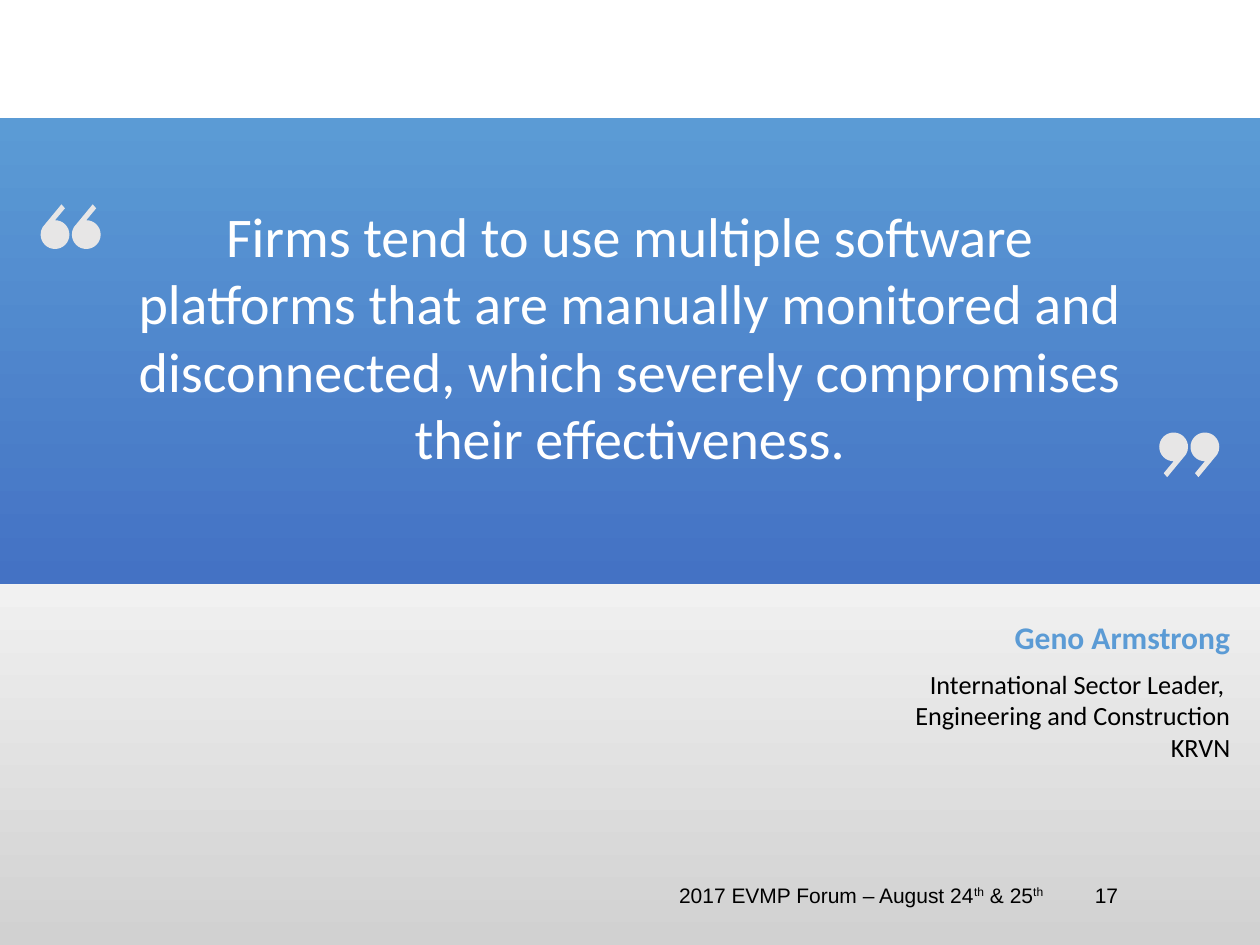
from copy import deepcopy
from dataclasses import dataclass

from lxml.etree import SubElement
from pptx import Presentation
from pptx.dml.color import RGBColor
from pptx.dml.fill import FillFormat as Fill
from pptx.enum.shapes import MSO_SHAPE as Shape
from pptx.enum.text import MSO_ANCHOR as Anchor, MSO_AUTO_SIZE as Auto, PP_ALIGN as Align
from pptx.oxml.ns import qn
from pptx.shapes.shapetree import GroupShapes as Group
from pptx.slide import Slide
from pptx.util import Cm, Pt

HUES = {
    "white": "FFFFFF", "pale": "FBFBFB", "grey": "D1D1D1",
    "navy": "4472C4", "sky": "5B9BD5", "mark": "E7E6E6", "black": "000000",
}
RAISED = "th"
RAD, PULL = 0.29, 0.16
TAIL = [(0.13, -0.61), (0.2, -0.53), (0, -RAD)]
BOWL = [
    (PULL, -RAD), (RAD, -PULL), (RAD, 0),
    (RAD, PULL), (PULL, RAD), (0, RAD),
    (-PULL, RAD), (-RAD, PULL), (-RAD, 0),
    (-RAD, -0.05), (-0.28, -0.1), (-0.25, -0.15),
]


@dataclass
class Label:
    box: tuple[float, float, float, float]
    runs: list[str]
    size: int
    hue: str
    face: str = "Calibri"
    align: Align = Align.LEFT
    anchor: Anchor = Anchor.TOP
    bold: bool = False
    auto: Auto = Auto.NONE


@dataclass
class Quote:
    x: float
    y: float
    side: int
    gap: float = 0.63


LABELS = [
    Label((2.2, 2.34, 21, 8.87),
          ["Firms tend to use multiple software platforms that are manually monitored "
           "and disconnected, which severely compromises their effectiveness."],
          32, "white", align=Align.CENTER, anchor=Anchor.MIDDLE),
    Label((9.61, 12.33, 15.44, 1.02), ["Geno Armstrong"], 18, "sky",
          align=Align.RIGHT, anchor=Anchor.MIDDLE, bold=True, auto=Auto.SHAPE_TO_FIT_TEXT),
    Label((9.61, 13.34, 15.44, 2.18),
          ["International Sector Leader, \nEngineering and Construction\nKRVN"],
          15, "black", align=Align.RIGHT, auto=Auto.SHAPE_TO_FIT_TEXT),
    Label((13.44, 17.66, 8.36, 1.02),
          ["2017 EVMP Forum – August 24", RAISED, " & 25", RAISED], 12, "black", "Arial"),
    Label((21.82, 17.66, 1.83, 1.02), ["17"], 12, "black", "Arial"),
]
QUOTES = [Quote(1.11, 4.73, 1), Quote(24.29, 9.01, -1)]


def tint(name: str) -> RGBColor:
    return RGBColor.from_string(HUES[name])


def blend(fill: Fill, names: list[str], angle: int) -> None:
    fill.gradient()
    fill.gradient_angle = angle
    first = fill.gradient_stops[0]._gs
    for _ in names[2:]:
        first.addnext(deepcopy(first))
    for i, (stop, name) in enumerate(zip(fill.gradient_stops, names)):
        stop.position = i / (len(names) - 1)
        stop.color.rgb = tint(name)


def write(slide: Slide, label: Label) -> None:
    frame = slide.shapes.add_textbox(*map(Cm, label.box)).text_frame
    frame.word_wrap = True
    frame.auto_size = label.auto
    frame.vertical_anchor = label.anchor
    para = frame.paragraphs[0]
    para.alignment = label.align
    if len(label.runs) == 1:
        para.text = label.runs[0]
    else:
        for text in label.runs:
            run = para.add_run()
            run.text = text
            if text == RAISED:
                run._r.get_or_add_rPr().set("baseline", "30000")
    font = para.font
    font.name, font.size, font.bold = label.face, Pt(label.size), label.bold
    font.color.rgb = tint(label.hue)


def draw(group: Group, x: float, y: float, side: int) -> None:
    points = [(Cm(x + side * dx), Cm(y + side * dy)) for dx, dy in TAIL + BOWL]
    pen = group.build_freeform(*points[0])
    pen.add_line_segments(points[1:], close=True)
    shape = pen.convert_to_shape()
    bend(shape._element.find(".//" + qn("a:path")))
    shape.shadow.inherit = False
    shape.fill.solid()
    shape.fill.fore_color.rgb = tint("mark")
    shape.line.fill.background()


def bend(route) -> None:
    lines = route.findall(qn("a:lnTo"))[len(TAIL) - 1:]
    for i in range(0, len(lines), 3):
        curve = SubElement(route, qn("a:cubicBezTo"))
        lines[i].addprevious(curve)
        for line in lines[i:i + 3]:
            curve.append(line[0])
            route.remove(line)


def main() -> None:
    deck = Presentation()
    deck.slide_width, deck.slide_height = Cm(25.4), Cm(19.05)
    slide = deck.slides.add_slide(deck.slide_layouts[6])
    blend(slide.background.fill, ["white", "pale", "grey"], 270)
    band = slide.shapes.add_shape(Shape.RECTANGLE, 0, Cm(2.38), deck.slide_width, Cm(9.4))
    band.shadow.inherit = False
    band.line.fill.background()
    blend(band.fill, ["navy", "sky"], 90)
    for label in LABELS:
        write(slide, label)
    for quote in QUOTES:
        group = slide.shapes.add_group_shape().shapes
        for i in range(2):
            draw(group, quote.x + i * quote.side * quote.gap, quote.y, quote.side)
    deck.save("out.pptx")


if __name__ == "__main__":
    main()
